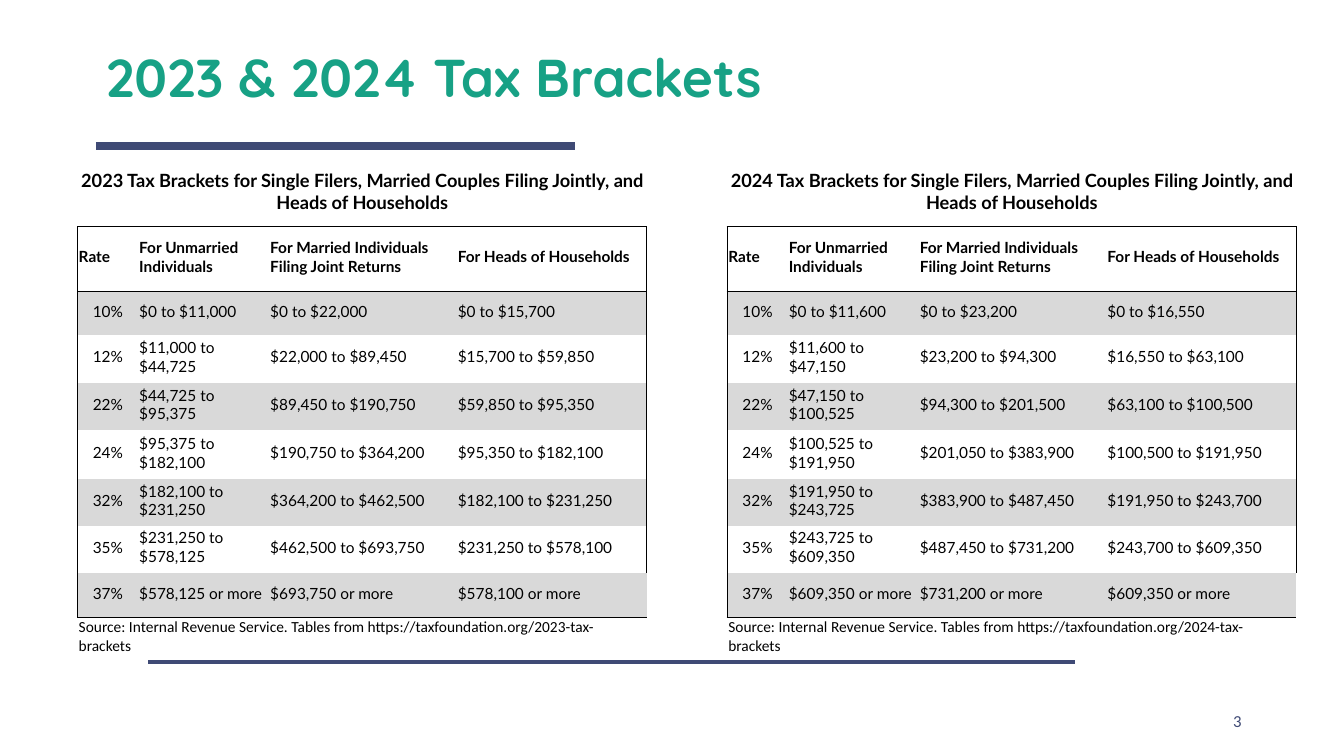
from dataclasses import dataclass
from lxml.etree import SubElement
from pptx import Presentation
from pptx.dml.color import RGBColor as Color
from pptx.enum.shapes import MSO_CONNECTOR as Link
from pptx.enum.text import MSO_ANCHOR as Anchor, PP_ALIGN as Align
from pptx.oxml.ns import qn
from pptx.util import Pt


@dataclass(frozen=True)
class Theme:
    green: str = "17A185"
    navy: str = "3F4A75"
    black: str = "000000"
    gray: str = "D9D9D9"
    title: int = 38
    head: int = 13
    page: int = 12
    body: int = 11


THEME = Theme()
PLAIN = "{2D5ABB26-0587-4C30-8999-92F81FD0307C}"
WIDTHS = [43.2, 93.6, 134, 135.6]
HEIGHTS = [47.5, 46, 31.5, 34, 34, 35, 33, 34, 31.5, 23]
HEADS = ["Rate", "For Unmarried Individuals",
         "For Married Individuals Filing Joint Returns", "For Heads of Households"]
RATES = ["10%", "12%", "22%", "24%", "32%", "35%", "37%"]
YEARS = {
    2023: [
        ("$0 to $11,000", "$0 to $22,000", "$0 to $15,700"),
        ("$11,000 to $44,725", "$22,000 to $89,450", "$15,700 to $59,850"),
        ("$44,725 to $95,375", "$89,450 to $190,750", "$59,850 to $95,350"),
        ("$95,375 to $182,100", "$190,750 to $364,200", "$95,350 to $182,100"),
        ("$182,100 to $231,250", "$364,200 to $462,500", "$182,100 to $231,250"),
        ("$231,250 to $578,125", "$462,500 to $693,750", "$231,250 to $578,100"),
        ("$578,125 or more", "$693,750 or more", "$578,100 or more"),
    ],
    2024: [
        ("$0 to $11,600", "$0 to $23,200", "$0 to $16,550"),
        ("$11,600 to $47,150", "$23,200 to $94,300", "$16,550 to $63,100"),
        ("$47,150 to $100,525", "$94,300 to $201,500", "$63,100 to $100,500"),
        ("$100,525 to $191,950", "$201,050 to $383,900", "$100,500 to $191,950"),
        ("$191,950 to $243,725", "$383,900 to $487,450", "$191,950 to $243,700"),
        ("$243,725 to $609,350", "$487,450 to $731,200", "$243,700 to $609,350"),
        ("$609,350 or more", "$731,200 or more", "$609,350 or more"),
    ],
}


def style(para, size, face, color, bold=False, align=Align.LEFT):
    para.alignment = align
    for run in para.runs:
        font = run.font
        font.size, font.name, font.bold = Pt(size), face, bold
        font.color.rgb = Color.from_string(color)


def add_text(slide, text, left, top, width, height, **look):
    frame = slide.shapes.add_textbox(Pt(left), Pt(top), Pt(width), Pt(height)).text_frame
    frame.word_wrap = True
    frame.vertical_anchor = Anchor.MIDDLE
    frame.text = text
    style(frame.paragraphs[0], **look)
    return frame


def add_rule(slide, left, right, y, weight):
    rule = slide.shapes.add_connector(Link.STRAIGHT, Pt(left), Pt(y), Pt(right), Pt(y))
    rule.line.color.rgb = Color.from_string(THEME.navy)
    rule.line.width = Pt(weight)
    SubElement(rule._element.spPr, qn("a:effectLst"))


def add_edges(cell, sides):
    props = cell._tc.get_or_add_tcPr()
    for side in sides:
        edge = SubElement(props, qn(f"a:ln{side}"), w=str(Pt(1)))
        paint = SubElement(edge, qn("a:solidFill"))
        SubElement(paint, qn("a:srgbClr"), val=THEME.black)


def fill_cell(cell, text, fill=None, sides="", anchor=Anchor.MIDDLE,
              size=THEME.body, face="Lato", **look):
    cell.margin_left = cell.margin_right = cell.margin_top = Pt(0.72)
    cell.margin_bottom = Pt(3.6)
    cell.vertical_anchor = anchor
    add_edges(cell, sides)
    if fill:
        cell.fill.solid()
        cell.fill.fore_color.rgb = Color.from_string(fill)
    else:
        cell.fill.background()
    cell.text = text
    style(cell.text_frame.paragraphs[0], size, face, THEME.black, **look)


def add_table(slide, left, top, year, bands):
    frame = slide.shapes.add_table(len(HEIGHTS), len(WIDTHS), Pt(left), Pt(top),
                                   Pt(sum(WIDTHS)), Pt(sum(HEIGHTS)))
    table = frame.table
    table.first_row = table.horz_banding = False
    table._tbl.tblPr.find(qn("a:tableStyleId")).text = PLAIN
    for col, width in zip(table.columns, WIDTHS):
        col.width = Pt(width)
    for row, height in zip(table.rows, HEIGHTS):
        row.height = Pt(height)

    last = len(HEIGHTS) - 1
    for r in (0, last):
        table.cell(r, 0).merge(table.cell(r, len(WIDTHS) - 1))
    fill_cell(table.cell(0, 0),
              f"{year} Tax Brackets for Single Filers, Married Couples Filing Jointly, "
              "and Heads of Households",
              size=THEME.head, bold=True, align=Align.CENTER, sides="B")
    fill_cell(table.cell(last, 0),
              "Source: Internal Revenue Service. Tables from "
              f"https://taxfoundation.org/{year}-tax-brackets",
              face="Calibri", anchor=Anchor.BOTTOM, sides="T")

    rows = [HEADS] + [(rate, *band) for rate, band in zip(RATES, bands)]
    for r, row in enumerate(rows, 1):
        head, end = r == 1, r == len(rows)
        for c, text in enumerate(row):
            right = c == len(row) - 1
            sides = "L" * (c == 0) + "R" * (right and not end)
            sides += "T" * head + "B" * (end and not right)
            fill_cell(table.cell(r, c), text, sides=sides, bold=head,
                      fill=None if r % 2 else THEME.gray,
                      align=Align.CENTER if c == 0 and not head else Align.LEFT)


def main():
    deck = Presentation()
    deck.slide_width, deck.slide_height = Pt(960), Pt(540)
    slide = deck.slides.add_slide(deck.slide_layouts[6])
    add_rule(slide, 68.5, 411, 104.5, 6)
    add_rule(slide, 106, 768, 473, 3)
    title = add_text(slide, "2023 & 2024 Tax Brackets", 68.5, 28.8, 826, 57.6,
                     size=THEME.title, face="Quicksand", color=THEME.green, bold=True)
    title.paragraphs[0].line_spacing = 0.9
    add_text(slide, "3", 678, 500.5, 216, 28.8, size=THEME.page, face="Calibri",
             color=THEME.navy, align=Align.RIGHT)
    for i, (year, bands) in enumerate(YEARS.items()):
        add_table(slide, 55.5 + i * 464, 114.5, year, bands)
    deck.save("out.pptx")


if __name__ == "__main__":
    main()
